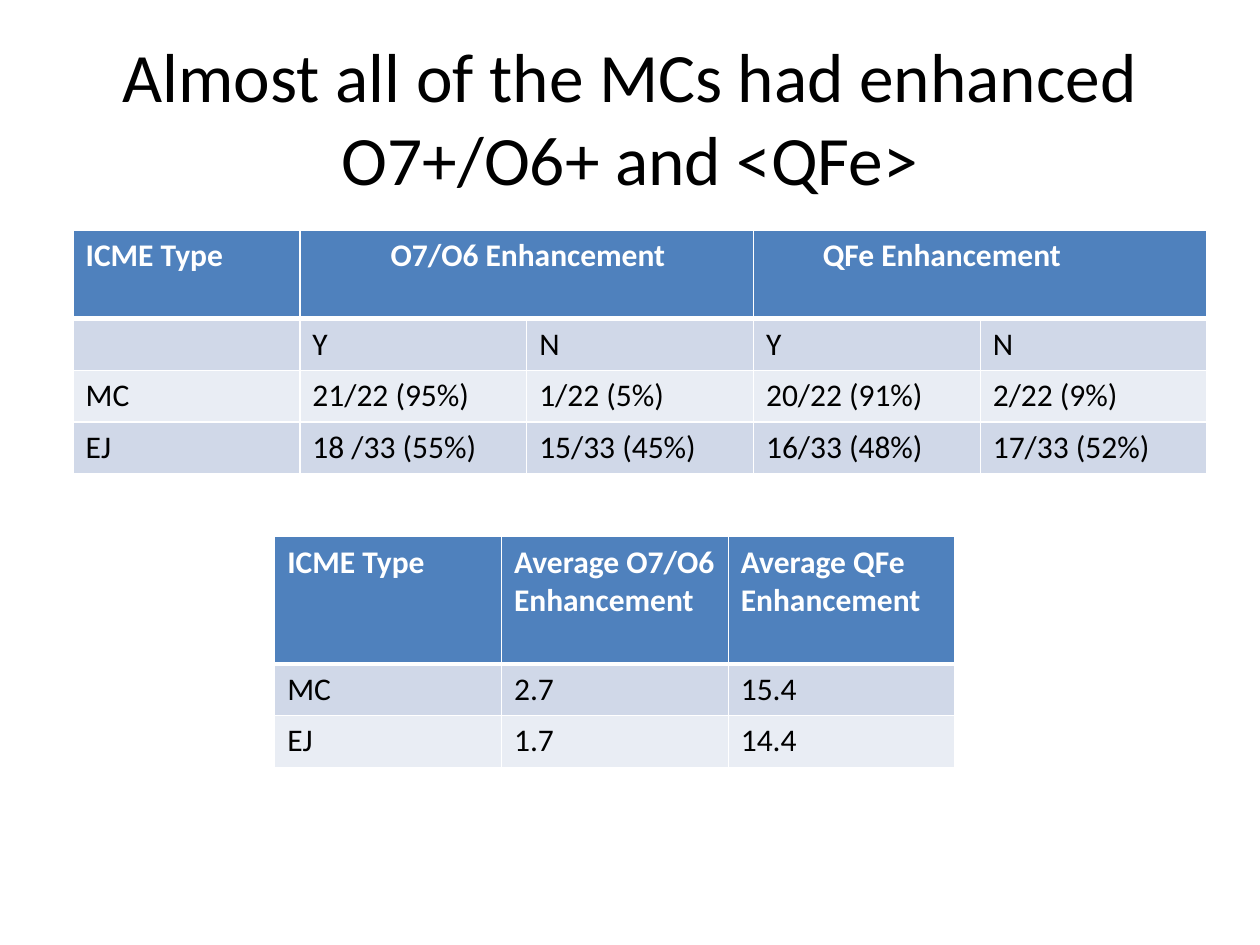
import pptx
import pptx.dml.color
import pptx.enum.text
import pptx.oxml
import pptx.oxml.ns
import pptx.util
import lxml.etree

Inches = pptx.util.Inches
HEADER, DARK_BAND, LIGHT_BAND = "4F81BD", "D0D8E8", "E9EDF4"
COLUMN, ROW = 1.8, 0.41


def color(value):
    return pptx.dml.color.RGBColor.from_string(value)


def format_font(font, size, ink, bold=False):
    for name, value in {"name": "Calibri", "size": pptx.util.Pt(size), "bold": bold}.items():
        setattr(font, name, value)
    font.color.rgb = color(ink)


presentation = pptx.Presentation()
presentation.slide_width, presentation.slide_height = Inches(10), Inches(7.5)
slide = presentation.slides.add_slide(presentation.slide_layouts[5])

title = slide.shapes.title
box = {"left": 0.5, "top": 0.3, "width": 9, "height": 1.25}
for name, value in box.items():
    setattr(title, name, Inches(value))
title.text_frame.text = "Almost all of the MCs had enhanced O7+/O6+ and <QFe>"
title.text_frame.word_wrap = True
title.text_frame.auto_size = pptx.enum.text.MSO_AUTO_SIZE.NONE
title.text_frame.vertical_anchor = pptx.enum.text.MSO_ANCHOR.MIDDLE
title.text_frame.paragraphs[0].alignment = pptx.enum.text.PP_ALIGN.CENTER
format_font(title.text_frame.paragraphs[0].runs[0].font, 39.6, "000000")

tables = [
    {
        "left": 0.58, "top": 1.83, "header_height": 0.7,
        "merges": [(1, 2), (3, 4)], "insets": {1: 0.72, 3: 0.55},
        "rows": [
            ["ICME Type", "O7/O6 Enhancement", "", "QFe Enhancement", ""],
            ["", "Y", "N", "Y", "N"],
            ["MC", "21/22 (95%)", "1/22 (5%)", "20/22 (91%)", "2/22 (9%)"],
            ["EJ", "18 /33 (55%)", "15/33 (45%)", "16/33 (48%)", "17/33 (52%)"],
        ],
    },
    {
        "left": 2.18, "top": 4.26, "header_height": 1.01,
        "merges": [], "insets": {},
        "rows": [
            ["ICME Type", "Average O7/O6\nEnhancement", "Average QFe Enhancement"],
            ["MC", "2.7", "15.4"],
            ["EJ", "1.7", "14.4"],
        ],
    },
]

for data in tables:
    rows = data["rows"]
    row_heights = [data["header_height"]] + [ROW] * (len(rows) - 1)
    column_count = len(rows[0])
    table = slide.shapes.add_table(
        len(rows), column_count, Inches(data["left"]), Inches(data["top"]),
        Inches(COLUMN * column_count), Inches(sum(row_heights)),
    ).table
    for column in table.columns:
        column.width = Inches(COLUMN)
    for first, last in data["merges"]:
        table.cell(0, first).merge(table.cell(0, last))

    for row_index, texts in enumerate(rows):
        table.rows[row_index].height = Inches(row_heights[row_index])
        is_header = row_index == 0
        fill = HEADER if is_header else (LIGHT_BAND, DARK_BAND)[row_index % 2]
        ink = "FFFFFF" if is_header else "000000"
        borders = {"lnL": 1, "lnR": 1, "lnT": 3 if row_index == 1 else 1, "lnB": 3 if is_header else 1}
        for column_index, text in enumerate(texts):
            cell = table.cell(row_index, column_index)
            cell.text = text
            if is_header and column_index in data["insets"]:
                cell.margin_left = Inches(data["insets"][column_index])
            properties = cell._tc.get_or_add_tcPr()
            for side, width in borders.items():
                line = lxml.etree.SubElement(properties, pptx.oxml.ns.qn(f"a:{side}"), w=str(pptx.util.Pt(width)))
                paint = lxml.etree.SubElement(line, pptx.oxml.ns.qn("a:solidFill"))
                lxml.etree.SubElement(paint, pptx.oxml.ns.qn("a:srgbClr"), val="FFFFFF")
            cell.fill.solid()
            cell.fill.fore_color.rgb = color(fill)
            for paragraph in cell.text_frame.paragraphs:
                format_font(paragraph.font, 18, ink, is_header)
                for run in paragraph.runs:
                    format_font(run.font, 18, ink, is_header)

presentation.save("out.pptx")
